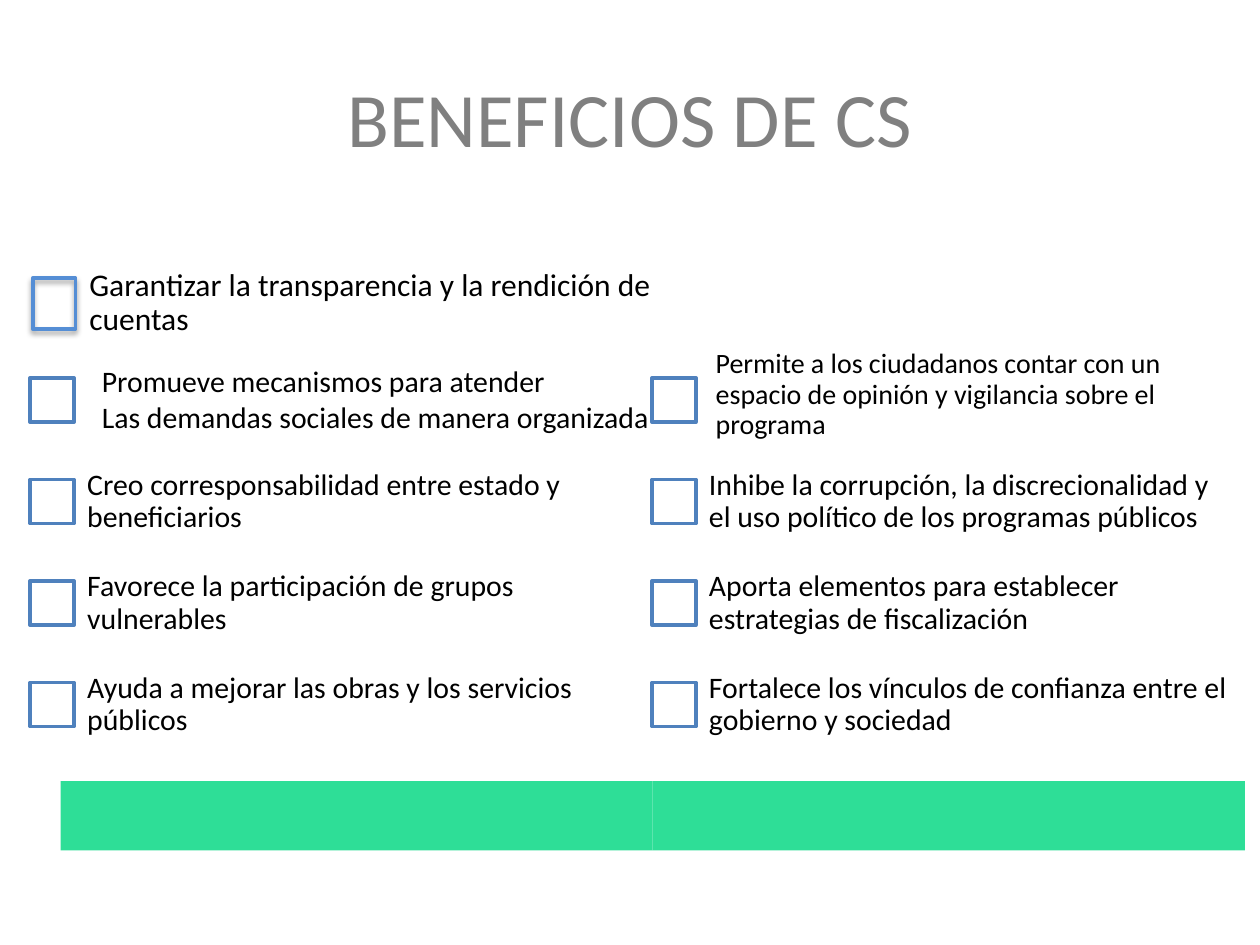
"""Build the slide listing the benefits of CS as a two-column checklist."""
from lxml import etree
from pptx import Presentation, util as u
from pptx.dml.color import RGBColor
from pptx.enum import shapes, text
from pptx.oxml import ns

Pt = u.Pt
THEME = {
    "font": "Calibri", "title": "808080", "body": "000000", "bar": "2EDE97",
    "box": "FFFFFF", "line": "4F81BD", "accent": "558ED5",
    "title_size": 44, "lead_size": 18, "body_size": 17, "small_size": 16,
}


def add_text(area, lines, size, color="body", inset=(9.36, 9.36), spacing=0.9,
             align=text.PP_ALIGN.LEFT, anchor=text.MSO_ANCHOR.MIDDLE, wrap=True):
    frame = page.shapes.add_textbox(*map(Pt, area)).text_frame
    frame.word_wrap = wrap
    frame.vertical_anchor = anchor
    frame.margin_left = frame.margin_right = Pt(inset[0])
    frame.margin_top = frame.margin_bottom = Pt(inset[1])
    frame.text = lines
    for para in frame.paragraphs:
        para.alignment = align
        para.line_spacing = spacing
        for span in para.runs:
            span.font.name = THEME["font"]
            span.font.size = Pt(THEME[size])
            span.font.color.rgb = RGBColor.from_string(THEME[color])
    return frame


def add_rectangle(area, fill=None, line=None, width=2):
    box = page.shapes.add_shape(shapes.MSO_SHAPE.RECTANGLE, *map(Pt, area))
    box.shadow.inherit = False
    if fill:
        box.fill.solid()
        box.fill.fore_color.rgb = RGBColor.from_string(THEME[fill])
    else:
        box.fill.background()
    if line:
        box.line.color.rgb = RGBColor.from_string(THEME[line])
        box.line.width = Pt(width)
    else:
        box.line.fill.background()
    return box


deck = Presentation()
deck.slide_width, deck.slide_height = Pt(720), Pt(540)
page = deck.slides.add_slide(deck.slide_layouts[6])

add_text((36, 21.6, 648, 90), "BENEFICIOS DE CS", "title_size", "title",
         inset=(7.2, 3.6), spacing=1, align=text.PP_ALIGN.CENTER)

columns = [
    (17.2, ["Creo corresponsabilidad entre estado y beneficiarios",
            "Favorece la participación de grupos vulnerables",
            "Ayuda a mejorar las obras y los servicios públicos"]),
    (372.5, ["Inhibe la corrupción, la discrecionalidad y el uso político de los programas públicos",
             "Aporta elementos para establecer estrategias de fiscalización",
             "Fortalece los vínculos de confianza entre el gobierno y sociedad"]),
]
first_row, row_step, box_size = 216, 58, 25.2
for column, (left, benefits) in enumerate(columns):
    add_rectangle((34.6 + column * 338.4, 446.4, 338.4, 39.6), "bar")
    for row in range(len(benefits) + 1):
        top = first_row + row * row_step
        box = add_rectangle((left, top, box_size, box_size), "box", "line")
        if row == 0:
            color = box.fill._xPr.find(".//" + ns.qn("a:srgbClr"))
            etree.SubElement(color, ns.qn("a:alpha"), val="90000")
        else:
            add_text((left + 23.3, top - 16.4, 314.6, 58.3), benefits[row - 1], "body_size")

add_text((48.2, 137.5, 338.4, 71.3), "Garantizar la transparencia y la rendición de cuentas",
         "lead_size", inset=(2.9, 2.2))
add_text((406.8, 190.1, 266.4, 71.3),
         "Permite a los ciudadanos contar con un espacio de opinión y vigilancia sobre el programa",
         "small_size", inset=(2.2, 1.4))
add_text((51.1, 203.8, 333.4, 48.2),
         "Promueve mecanismos para atender\nLas demandas sociales de manera organizada",
         "body_size", inset=(7.2, 3.6), spacing=1, anchor=text.MSO_ANCHOR.TOP, wrap=False)

lead_box = add_rectangle((18.7, 159.1, 24.5, 28.8), None, "accent", 2.25)
effects = lead_box._element.spPr.find(ns.qn("a:effectLst"))
shadow = etree.SubElement(effects, ns.qn("a:outerShdw"), blurRad=str(Pt(3.1)),
                          dist=str(Pt(1.8)), dir="5400000", rotWithShape="0")
shade = etree.SubElement(shadow, ns.qn("a:srgbClr"), val=THEME["body"])
etree.SubElement(shade, ns.qn("a:alpha"), val="35000")

deck.save("out.pptx")
